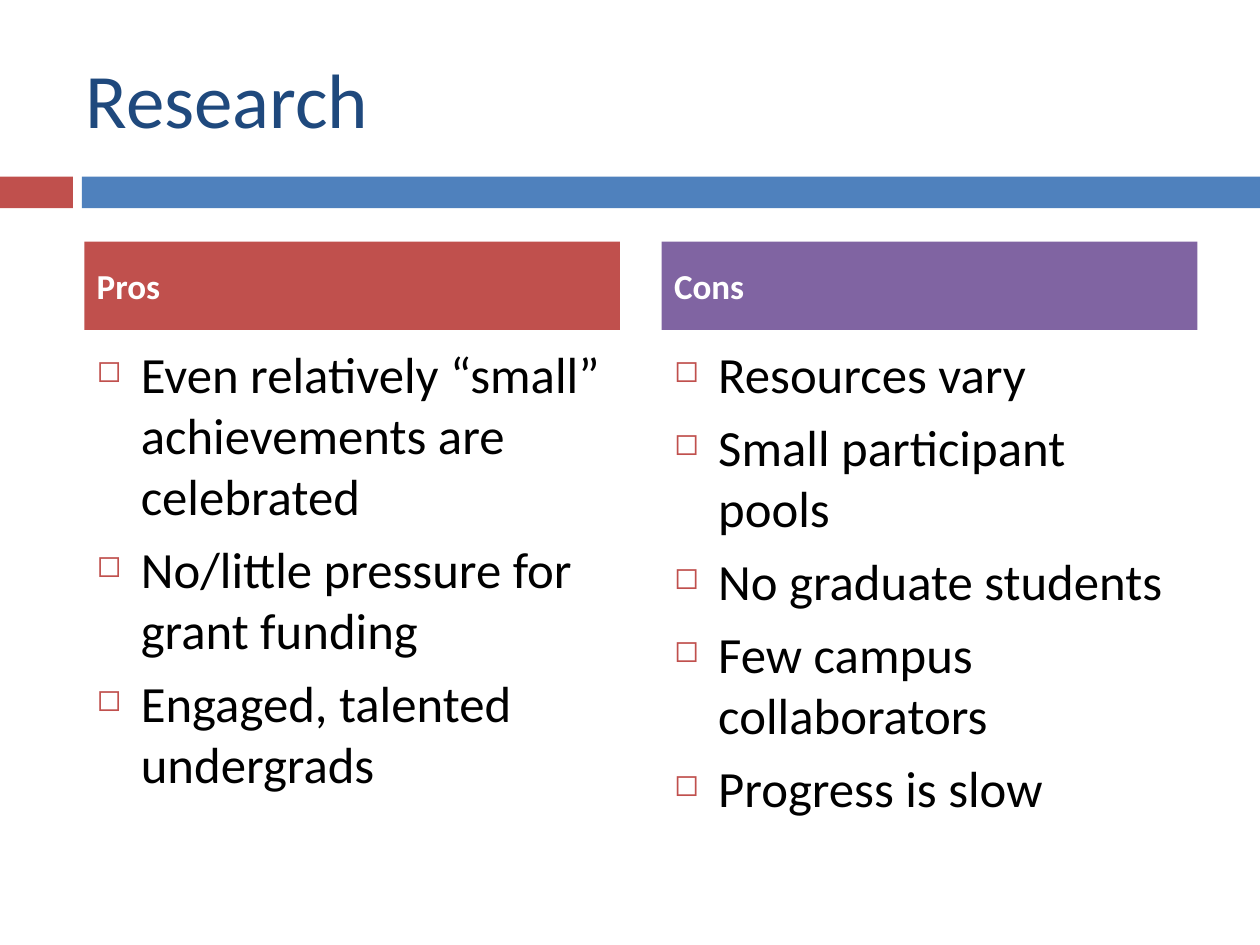
from dataclasses import dataclass

from lxml.etree import SubElement
from pptx import Presentation
from pptx.dml.color import RGBColor
from pptx.enum.shapes import MSO_SHAPE
from pptx.enum.text import MSO_ANCHOR, PP_ALIGN
from pptx.oxml.ns import qn
from pptx.util import Cm, Pt

FONT = "Calibri"
RED, BLUE, PURPLE = "C0504D", "4F81BD", "8064A2"
NAVY, BLACK, WHITE = "1F497D", "000000", "FFFFFF"
SLIDE_WIDTH, SLIDE_HEIGHT = 25.4, 19.05
COLUMN_WIDTH = 10.8
BULLET_INDENT = 0.89


@dataclass
class Band:
    left: float
    width: float
    color: str


@dataclass
class Column:
    left: float
    heading: str
    color: str
    points: list[str]


BANDS = [Band(0, 1.47, RED), Band(1.65, SLIDE_WIDTH - 1.65, BLUE)]
COLUMNS = [
    Column(1.7, "Pros", RED, [
        "Even relatively “small” achievements are celebrated",
        "No/little pressure for grant funding",
        "Engaged, talented undergrads",
    ]),
    Column(13.34, "Cons", PURPLE, [
        "Resources vary",
        "Small participant pools",
        "No graduate students",
        "Few campus collaborators",
        "Progress is slow",
    ]),
]


def rgb(color: str) -> RGBColor:
    return RGBColor.from_string(color)


def add_run(paragraph, text: str, size: float, color: str, bold: bool = False) -> None:
    run = paragraph.add_run()
    run.text = text
    run.font.name = FONT
    run.font.size = Pt(size)
    run.font.bold = bold
    run.font.color.rgb = rgb(color)


def add_rectangle(slide, left: float, top: float, width: float, height: float, color: str):
    shape = slide.shapes.add_shape(
        MSO_SHAPE.RECTANGLE, Cm(left), Cm(top), Cm(width), Cm(height))
    shape.shadow.inherit = False
    shape.fill.solid()
    shape.fill.fore_color.rgb = rgb(color)
    shape.line.fill.background()
    return shape


def set_bullet(paragraph) -> None:
    """Give the paragraph a small red square and a hanging indent."""
    properties = paragraph._p.get_or_add_pPr()
    properties.set("marL", str(Cm(BULLET_INDENT)))
    properties.set("indent", str(-Cm(BULLET_INDENT)))
    bullet_color = SubElement(properties, qn("a:buClr"))
    SubElement(bullet_color, qn("a:srgbClr"), val=RED)
    SubElement(properties, qn("a:buSzPct"), val="60000")
    SubElement(properties, qn("a:buChar"), char="◻")


def set_title(slide, text: str) -> None:
    title = slide.shapes.title
    title.left, title.top, title.width, title.height = Cm(1.47), Cm(0.76), Cm(22.66), Cm(2.41)
    title.text_frame.vertical_anchor = MSO_ANCHOR.MIDDLE
    paragraph = title.text_frame.paragraphs[0]
    paragraph.alignment = PP_ALIGN.LEFT
    add_run(paragraph, text, 44, NAVY)


def add_column(slide, column: Column) -> None:
    heading = add_rectangle(slide, column.left, 4.87, COLUMN_WIDTH, 1.78, column.color)
    heading.text_frame.vertical_anchor = MSO_ANCHOR.MIDDLE
    paragraph = heading.text_frame.paragraphs[0]
    paragraph.alignment = PP_ALIGN.LEFT
    paragraph.space_before = Pt(7)
    add_run(paragraph, column.heading, 20, WHITE, bold=True)

    body = slide.shapes.add_textbox(Cm(column.left), Cm(6.78), Cm(COLUMN_WIDTH), Cm(9.96))
    frame = body.text_frame
    frame.word_wrap = True
    for index, point in enumerate(column.points):
        paragraph = frame.add_paragraph() if index else frame.paragraphs[0]
        paragraph.space_before = Pt(7)
        set_bullet(paragraph)
        add_run(paragraph, point, 29, BLACK)


def main() -> None:
    presentation = Presentation()
    presentation.slide_width = Cm(SLIDE_WIDTH)
    presentation.slide_height = Cm(SLIDE_HEIGHT)
    slide = presentation.slides.add_slide(presentation.slide_layouts[5])
    set_title(slide, "Research")
    for band in BANDS:
        add_rectangle(slide, band.left, 3.56, band.width, 0.64, band.color)
    for column in COLUMNS:
        add_column(slide, column)
    presentation.save("out.pptx")


if __name__ == "__main__":
    main()
